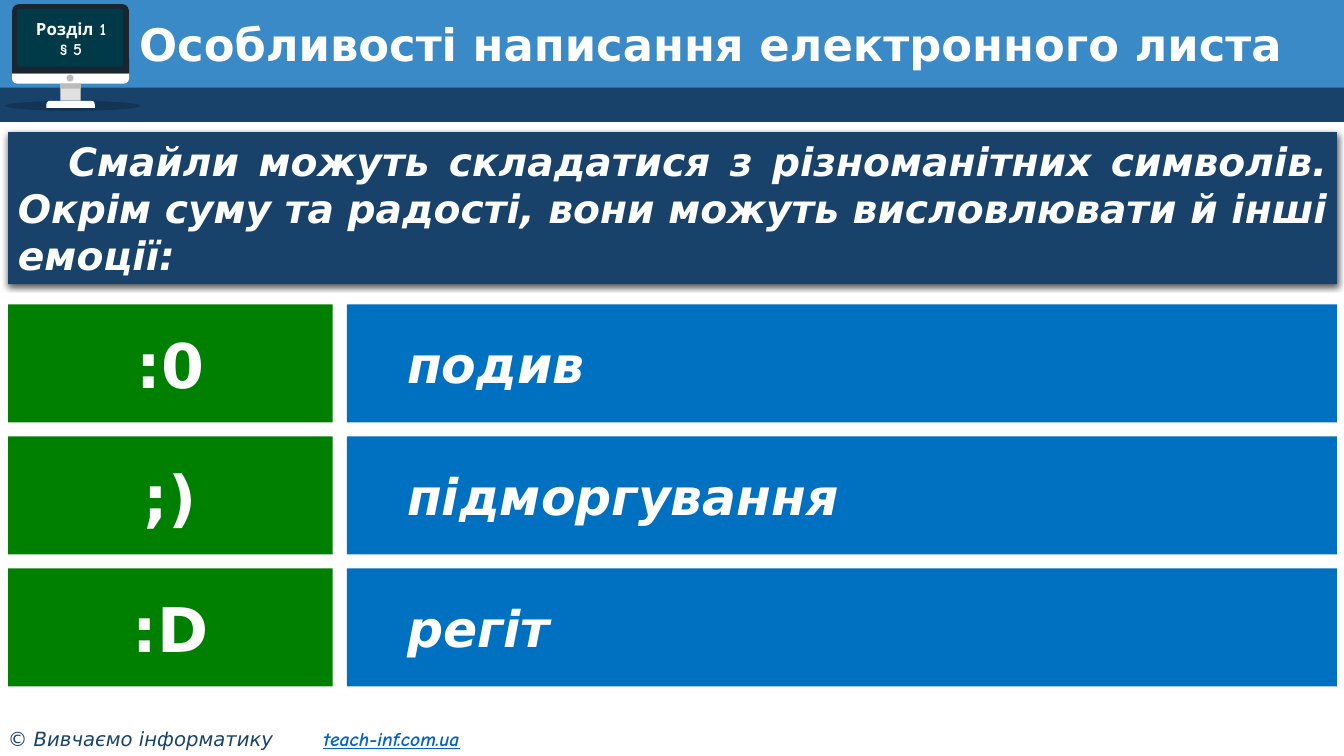
from lxml import etree
from pptx import Presentation
from pptx import util as u
from pptx.dml.color import RGBColor
from pptx.enum import shapes as kinds, text
from pptx.oxml import ns

COLORS = {
    "white": "FFFFFF", "black": "000000", "sky": "398AC7", "navy": "19426B",
    "green": "008000", "blue": "0070C0", "link": "0563C1", "case": "182632",
    "screen": "003948", "stand": "E1E1E1", "grey": "BBBBBB",
}
MAIN_FONT, NOTE_FONT = "DejaVu Sans", "Comic Neue"
KIND, ALIGN, ANCHOR = kinds.MSO_SHAPE, text.PP_ALIGN, text.MSO_ANCHOR
EMOTICONS = [(":0", "подив"), (";)", "підморгування"), (":D", "регіт")]


def color(name):
    return RGBColor.from_string(COLORS[name])


def add_xml(parent, tag, **attributes):
    return etree.SubElement(parent, ns.qn(tag), {k: str(v) for k, v in attributes.items()})


class SlideBuilder:
    def __init__(self, slide):
        self.slide = slide

    def block(self, box, fill, kind=KIND.RECTANGLE, corners=(), alpha=None):
        shape = self.slide.shapes.add_shape(kind, *map(u.Inches, box))
        shape.shadow.inherit = False
        shape.line.fill.background()
        shape.fill.solid()
        shape.fill.fore_color.rgb = color(fill)
        for i, corner in enumerate(corners):
            shape.adjustments[i] = corner
        if alpha:
            tint = shape.element.spPr.find(".//" + ns.qn("a:srgbClr"))
            add_xml(tint, "a:alpha", val=alpha * 1000)
        return shape

    def textbox(self, box):
        return self.slide.shapes.add_textbox(*map(u.Inches, box))

    def title(self, box, wording):
        title = self.slide.shapes.title
        title.left, title.top, title.width, title.height = map(u.Inches, box)
        # The placeholder starts at the back, so lift it above the header bands
        title.element.getparent().append(title.element)
        title.text_frame.auto_size = text.MSO_AUTO_SIZE.NONE
        self.add_lines(title, [wording], 32).line_spacing = 0.9

    def add_lines(self, shape, lines, size, font=MAIN_FONT, italic=False,
                  align=ALIGN.LEFT, anchor=ANCHOR.MIDDLE, indent=0):
        """Fill the shape with one paragraph per line; return the last paragraph."""
        frame = shape.text_frame
        frame.word_wrap = True
        frame.vertical_anchor = anchor
        for i, line in enumerate(lines):
            paragraph = frame.add_paragraph() if i else frame.paragraphs[0]
            paragraph.alignment = align
            if indent:
                properties = paragraph._p.get_or_add_pPr()
                properties.set("marL", "0")
                properties.set("indent", str(u.Inches(indent)))
            self.add_run(paragraph, line, size, font, italic=italic)
        return paragraph

    def add_run(self, paragraph, wording, size, font=MAIN_FONT, ink="white",
                bold=True, italic=False, underline=False):
        run = paragraph.add_run()
        run.text = wording
        style = run.font
        style.name, style.size = font, u.Pt(size)
        style.bold, style.italic, style.underline = bold, italic, underline
        style.color.rgb = color(ink)

    def drop_shadow(self, shape):
        effects = shape.element.spPr.find(ns.qn("a:effectLst"))
        shadow = add_xml(effects, "a:outerShdw", blurRad=u.Pt(4.5), dist=u.Pt(1.5),
                         dir=5400000, algn="t", rotWithShape=0)
        add_xml(add_xml(shadow, "a:srgbClr", val=COLORS["black"]), "a:alpha", val=63000)

    def monitor(self):
        self.block((0.05, 1, 1.34, 0.1), "black", KIND.OVAL, alpha=20)
        self.block((0.12, 0.04, 1.16, 0.69), "case", KIND.ROUND_2_SAME_RECTANGLE, (0.1, 0))
        self.block((0.12, 0.73, 1.16, 0.1), "white", KIND.ROUND_2_SAME_RECTANGLE, (0, 0.5))
        self.block((0.6, 0.83, 0.2, 0.17), "stand")
        self.block((0.6, 0.83, 0.2, 0.05), "grey")
        self.block((0.46, 1, 0.48, 0.07), "white", KIND.ROUND_2_SAME_RECTANGLE, (0.5, 0))
        self.block((0.66, 0.74, 0.07, 0.07), "grey", KIND.OVAL)
        self.block((0.17, 0.09, 1.05, 0.57), "screen", KIND.ROUNDED_RECTANGLE, (0.04,))
        self.add_lines(self.textbox((0.13, 0.09, 1.15, 0.59)), ["Розділ 1", "§ 5"], 12,
                       NOTE_FONT, align=ALIGN.CENTER)

    def footer(self):
        footer = self.textbox((-0.02, 7.16, 5.23, 0.34))
        footer.text_frame.word_wrap = True
        credit = footer.text_frame.paragraphs[0]
        tabs = add_xml(credit._p.get_or_add_pPr(), "a:tabLst")
        add_xml(tabs, "a:tab", pos=u.Inches(3.13), algn="l")
        self.add_run(credit, "© Вивчаємо інформатику\t", 14, ink="navy",
                     bold=False, italic=True)
        self.add_run(credit, "teach-inf.com.ua", 14, NOTE_FONT, "link",
                     italic=True, underline=True)

    def emoticon_row(self, top, emoticon, meaning):
        self.add_lines(self.block((0.08, top, 3.22, 1.17), "green"), [emoticon], 44,
                       align=ALIGN.CENTER)
        self.add_lines(self.block((3.44, top, 9.82, 1.17), "blue"), [meaning], 36,
                       italic=True, indent=0.5)


def main():
    deck = Presentation()
    deck.slide_width, deck.slide_height = u.Inches(13.33), u.Inches(7.5)
    page = SlideBuilder(deck.slides.add_slide(deck.slide_layouts[5]))

    page.block((0, 0, 13.33, 0.91), "sky")
    page.block((0, 0.87, 13.33, 0.34), "navy")
    page.monitor()
    page.footer()
    page.title((1.28, 0.18, 11.72, 0.58), "Особливості написання електронного листа")

    intro = page.block((0.08, 1.31, 13.18, 1.51), "navy")
    page.drop_shadow(intro)
    page.add_lines(intro, ["Смайли можуть складатися з різноманітних символів. "
                           "Окрім суму та радості, вони можуть висловлювати й інші емоції:"],
                   28, italic=True, align=ALIGN.JUSTIFY, anchor=ANCHOR.TOP, indent=0.5)

    for i, (emoticon, meaning) in enumerate(EMOTICONS):
        page.emoticon_row(3.02 + 1.31 * i, emoticon, meaning)

    deck.save("out.pptx")


if __name__ == "__main__":
    main()
